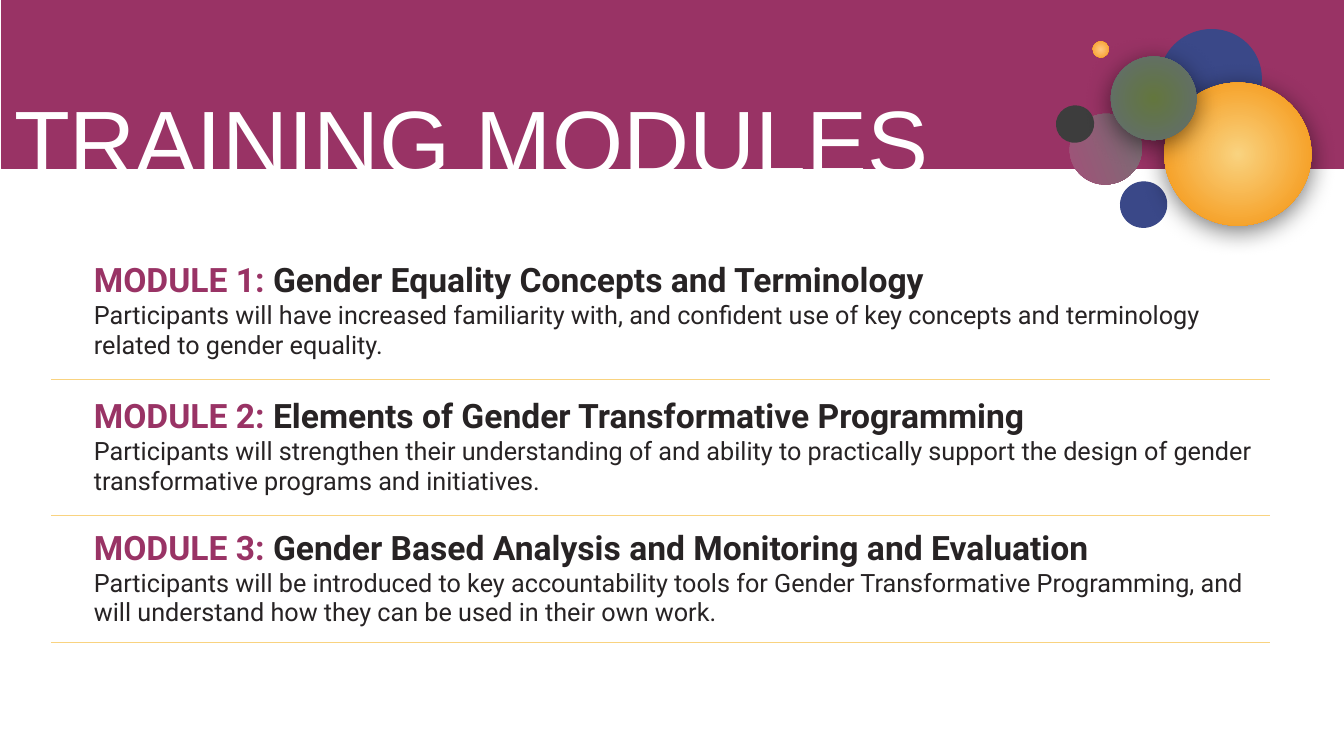
from lxml import etree
from pptx import Presentation
from pptx.dml.color import RGBColor
from pptx.enum.shapes import MSO_SHAPE
from pptx.enum.text import MSO_ANCHOR
from pptx.oxml.ns import qn
from pptx.util import Inches, Pt

RECTANGLE, OVAL = MSO_SHAPE.RECTANGLE, MSO_SHAPE.OVAL
MIDDLE = MSO_ANCHOR.MIDDLE
WIDTH, HEIGHT = Inches(13.33), Inches(7.5)
INSET = Inches(0.13)
COLORS = {
    "plum": "993365", "white": "FFFFFF", "ink": "272324", "gold": "F9D380",
    "orange": "F58F09", "peach": "FFC982", "navy": "3A4888", "charcoal": "3D3D3D",
    "pink": "A64D79", "gray": "737373", "olive": "63763E", "slate": "616D73",
}
TITLE = {"size": Pt(65.3), "name": "Arial"}
HEADING = {"size": Pt(24), "name": "Roboto", "bold": True}
BODY = {"size": Pt(18), "name": "Roboto", "bold": False}
MARGINS = ("margin_left", "margin_top", "margin_right", "margin_bottom")
MODULES = [
    ("Gender Equality Concepts and Terminology",
     "Participants will have increased familiarity with, and confident use of key "
     "concepts and terminology related to gender equality."),
    ("Elements of Gender Transformative Programming",
     "Participants will strengthen their understanding of and ability to practically "
     "support the design of gender transformative programs and initiatives."),
    ("Gender Based Analysis and Monitoring and Evaluation",
     "Participants will be introduced to key accountability tools for Gender "
     "Transformative Programming, and will understand how they can be used in "
     "their own work."),
]
COLUMN_SHARES = (2.18, 88.52)
ROW_SHARES = (18, 18, 14.4)
BUBBLES = [
    ((83.4, 24, 3.38, 6.13), {"fill": "navy", "outline": "navy", "turn": 250}),
    ((79.65, 14.93, 5.25, 9.6), {"fill": ("pink", "gray"), "turn": 250}),
    ((86.4, 3.73, 7.35, 13.47), {"fill": "navy", "outline": "navy", "turn": 250}),
    ((78.6, 13.87, 2.78, 5.07), {"fill": "charcoal", "turn": 250}),
    ((81.3, 5.47, 1.2, 2.13), {"fill": ("peach", "orange"), "radial": True, "turn": 250}),
    ((86.63, 10.93, 10.95, 18.93),
     {"fill": ("gold", "orange"), "radial": True, "raised": True}),
    ((82.65, 7.47, 6.38, 11.07),
     {"fill": ("olive", "slate"), "radial": True, "raised": True}),
]


def color(name):
    """Return the named colour."""
    return RGBColor.from_string(COLORS[name])


def across(share):
    """Turn a percentage of the slide's width into a length."""
    return int(WIDTH * share / 100)


def down(share):
    """Turn a percentage of the slide's height into a length."""
    return int(HEIGHT * share / 100)


def place(left, top, width, height):
    """Turn four percentages into a position and a size."""
    return across(left), down(top), across(width), down(height)


def add_node(parent, tag, **attributes):
    """Append a drawing element with the given attributes."""
    node = etree.SubElement(parent, qn(tag))
    for key, value in attributes.items():
        node.set(key, str(value))
    return node


def paint_gradient(shape, names, radial):
    """Fill a shape with a two-colour linear or radial gradient."""
    shape.fill.gradient()
    shape.fill.gradient_angle = 270
    for stop, name, position in zip(shape.fill.gradient_stops, names, (0, 1)):
        stop.color.rgb = color(name)
        stop.position = position
    if radial:
        gradient = shape._element.spPr.find(qn("a:gradFill"))
        gradient.remove(gradient.find(qn("a:lin")))
        circle = add_node(gradient, "a:path", path="circle")
        add_node(circle, "a:fillToRect", l=50000, t=50000, r=50000, b=50000)


def raise_shape(shape):
    """Give a shape a soft shadow below it."""
    effects = shape._element.spPr.find(qn("a:effectLst"))
    shadow = add_node(effects, "a:outerShdw", blurRad=Pt(18), dist=Pt(4),
                      dir=5400000, rotWithShape=0)
    shade = add_node(shadow, "a:srgbClr", val="000000")
    add_node(shade, "a:alpha", val=53000)


def add_figure(shapes, kind, area, fill, outline=None, turn=0, radial=False, raised=False):
    """Add a filled preset shape."""
    shape = shapes.add_shape(kind, *place(*area))
    shape.shadow.inherit = False
    shape.rotation = turn
    if isinstance(fill, tuple):
        paint_gradient(shape, fill, radial)
    else:
        shape.fill.solid()
        shape.fill.fore_color.rgb = color(fill)
    if outline:
        shape.line.color.rgb = color(outline)
        shape.line.width = Pt(0.75)
    else:
        shape.line.fill.background()
    if raised:
        raise_shape(shape)


def add_span(para, text, style, ink):
    """Add a run of formatted text."""
    span = para.add_run()
    span.text = text
    span.font.color.rgb = color(ink)
    for key, value in style.items():
        setattr(span.font, key, value)


def set_margins(holder):
    """Set equal inner margins on a text frame or a cell."""
    for side in MARGINS:
        setattr(holder, side, INSET)


def add_title(page, area, text):
    """Add the slide's title."""
    frame = page.shapes.add_textbox(*place(*area)).text_frame
    frame.word_wrap = True
    frame.vertical_anchor = MIDDLE
    set_margins(frame)
    add_span(frame.paragraphs[0], text, TITLE, "white")


def style_cell(cell, first):
    """Give a cell a white fill and gold rules between the rows."""
    properties = cell._tc.get_or_add_tcPr()
    rules = {"a:lnL": False, "a:lnR": False, "a:lnT": not first, "a:lnB": True}
    for tag, visible in rules.items():
        line = add_node(properties, tag, w=Pt(0.75))
        if visible:
            paint = add_node(line, "a:solidFill")
            add_node(paint, "a:srgbClr", val=COLORS["gold"])
        else:
            add_node(line, "a:noFill")
    cell.fill.solid()
    cell.fill.fore_color.rgb = color("white")


def add_modules(page, left, top):
    """Add the table of training modules."""
    area = place(left, top, sum(COLUMN_SHARES), sum(ROW_SHARES))
    table = page.shapes.add_table(len(MODULES), len(COLUMN_SHARES), *area).table
    table.first_row = table.horz_banding = False
    for column, share in zip(table.columns, COLUMN_SHARES):
        column.width = across(share)
    for index, (heading, summary) in enumerate(MODULES):
        table.rows[index].height = down(ROW_SHARES[index])
        for cell in table.rows[index].cells:
            style_cell(cell, index == 0)
        cell = table.cell(index, 1)
        cell.vertical_anchor = MIDDLE
        set_margins(cell)
        para = cell.text_frame.paragraphs[0]
        add_span(para, f"MODULE {index + 1}: ", HEADING, "plum")
        add_span(para, heading, HEADING, "ink")
        add_span(cell.text_frame.add_paragraph(), summary, BODY, "ink")


def main():
    """Build the slide and save it."""
    deck = Presentation()
    deck.slide_width, deck.slide_height = WIDTH, HEIGHT
    page = deck.slides.add_slide(deck.slide_layouts[6])
    add_figure(page.shapes, RECTANGLE, (0.08, 0, 100, 22.27), "plum", "plum")
    add_title(page, (0.08, 8.8, 93.17, 19.07), "TRAINING MODULES")
    add_modules(page, 3.83, 32.13)
    cluster = page.shapes.add_group_shape()
    for area, look in BUBBLES:
        add_figure(cluster.shapes, OVAL, area, **look)
    deck.save("out.pptx")


if __name__ == "__main__":
    main()
